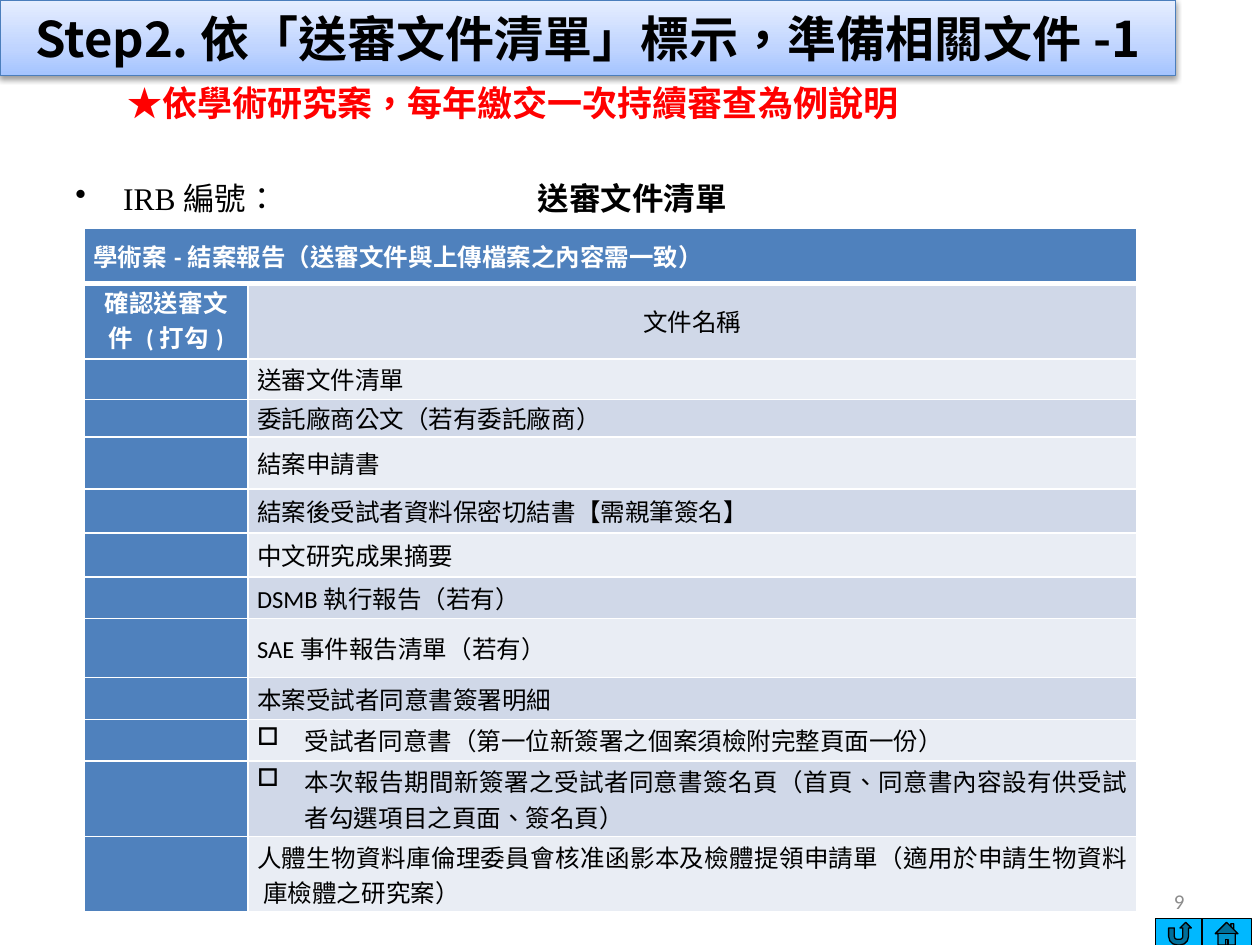
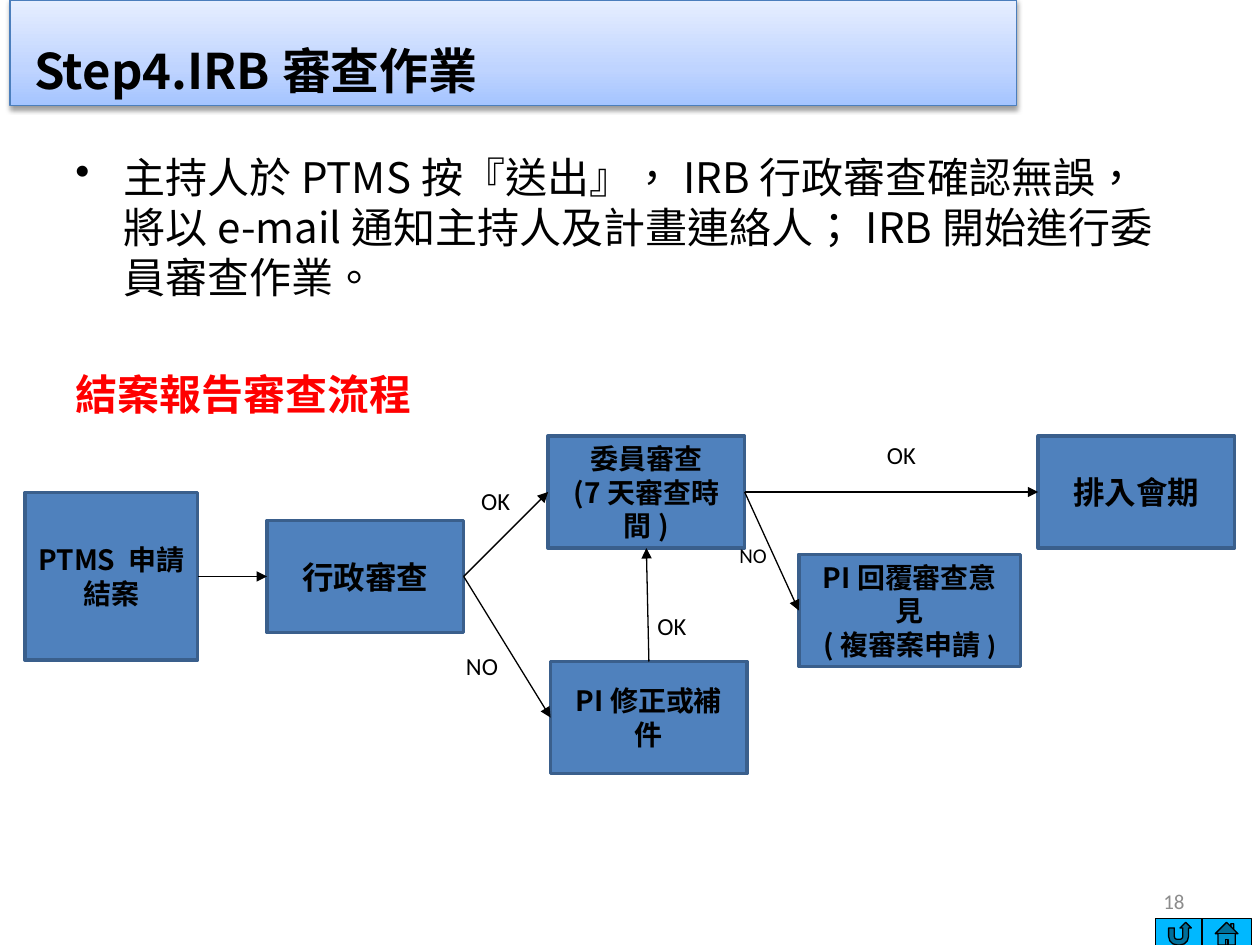
from lxml.etree import SubElement
from pptx import Presentation
from pptx.dml.color import RGBColor
from pptx.enum.shapes import MSO_CONNECTOR, MSO_SHAPE
from pptx.enum.text import MSO_ANCHOR as ANCHOR, PP_ALIGN as ALIGN
from pptx.oxml.ns import qn
from pptx.util import Inches, Pt

NOTO, CALIBRI, TIMES = "Noto Sans CJK SC", "Calibri", "Times New Roman"
BLACK, WHITE, RED, GREY = "000000", "FFFFFF", "FF0000", "8C8C8C"
BLUE, NODE_EDGE, BUTTON = "4F81BD", "3A5F8C", "00B8FF"
BANDS = ["D0D8E8", "E9EDF4"]
TITLE_EDGE = "4B7EBC"
TITLE_STOPS = [(0, "A4C4FF"), (35, "BFD4FF"), (100, "E6EEFF")]
HANG = 0.38

DOCUMENTS = [
    (0.32, "送審文件清單", 0, None),
    (0.3, "委託廠商公文（若有委託廠商）", 0, None),
    (0.41, "結案申請書", 0, None),
    (0.35, "結案後受試者資料保密切結書【需親筆簽名】", 0, None),
    (0.35, "中文研究成果摘要", 0, None),
    (0.33, "DSMB執行報告（若有）", 0, None),
    (0.47, "SAE事件報告清單（若有）", 0, None),
    (0.33, "本案受試者同意書簽署明細", 0, None),
    (0.33, "受試者同意書（第一位新簽署之個案須檢附完整頁面一份）", HANG, "□"),
    (0.6, "本次報告期間新簽署之受試者同意書簽名頁"
          "（首頁、同意書內容設有供受試者勾選項目之頁面、簽名頁）", HANG, "□"),
    (0.6, "人體生物資料庫倫理委員會核准函影本及檢體提領申請單"
          "（適用於申請生物資料庫檢體之研究案）", 0.05, None),
]

STEPS = {
    "apply": (0, 0.45, 1.37, 1.33, 16, [[("PTMS 申請結案", NOTO)]]),
    "admin": (1.92, 0.67, 1.56, 0.89, 18, [[("行政審查", NOTO)]]),
    "member": (4.15, 0, 1.56, 0.89, 16, [[("委員審查", NOTO)], [("(7天審查時間)", NOTO)]]),
    "amend": (4.17, 1.79, 1.56, 0.89, 16, [[("PI修正或補件", NOTO)]]),
    "meeting": (8.04, 0, 1.56, 0.89, 18, [[("排入會期", NOTO)]]),
    "reply": (6.14, 0.94, 1.76, 0.89, 16,
              [[("PI回覆審查意見", NOTO)], [("(複審案申請", NOTO), (")", CALIBRI)]]),
}
TOP, LEFT, BOTTOM, RIGHT = range(4)
ARROWS = [
    ("apply", RIGHT, "admin", LEFT), ("admin", RIGHT, "amend", LEFT),
    ("admin", RIGHT, "member", LEFT), ("amend", TOP, "member", BOTTOM),
    ("member", RIGHT, "reply", LEFT), ("member", RIGHT, "meeting", LEFT),
]
ANSWERS = [
    (3.52, 0.35, "OK", 14), (3.4, 1.66, "NO", 14), (4.92, 1.34, "OK", 14),
    (6.74, -0.02, "OK", 14), (5.57, 0.8, "NO", 12),
]


def colour(value):
    return RGBColor.from_string(value)


def child(parent, tag, **attributes):
    return SubElement(parent, qn(tag), attributes)


def solid(part, fill, edge, width):
    part.shadow.inherit = False
    part.fill.solid()
    part.fill.fore_color.rgb = colour(fill)
    part.line.color.rgb = colour(edge)
    part.line.width = Pt(width)


def write(paragraph, text, size, font=NOTO, ink=BLACK, bold=False):
    run = paragraph.add_run()
    run.text = text
    run.font.size = Pt(size)
    run.font.bold = bold
    run.font.color.rgb = colour(ink)
    run.font.name = font
    properties = run.font._element
    properties.set("lang", "zh-TW")
    child(properties, "a:ea", typeface=NOTO)


def hang(paragraph, indent, bullet=None):
    properties = paragraph._p.get_or_add_pPr()
    properties.set("marL", str(Inches(indent)))
    properties.set("indent", str(-Inches(indent)))
    if bullet:
        child(properties, "a:buChar", char=bullet)


def leading(paragraph, size):
    paragraph.line_spacing = Pt(round(size * 1.2, 1))


def text_box(slide, left, top, width, height):
    frame = slide.shapes.add_textbox(
        Inches(left), Inches(top), Inches(width), Inches(height)).text_frame
    frame.word_wrap = True
    return frame


def title_band(slide, text, left, width, height, align, anchor, inset=0.1):
    band = slide.shapes.title
    band.left, band.top = Inches(left), 0
    band.width, band.height = Inches(width), Inches(height)
    gradient = child(band._element.spPr, "a:gradFill", rotWithShape="1")
    stops = child(gradient, "a:gsLst")
    for position, shade in TITLE_STOPS:
        child(child(stops, "a:gs", pos=str(position * 1000)), "a:srgbClr", val=shade)
    child(gradient, "a:lin", ang="16200000", scaled="0")
    band.line.color.rgb = colour(TITLE_EDGE)
    band.line.width = Pt(0.75)
    effects = child(band._element.spPr, "a:effectLst")
    shadow = child(effects, "a:outerShdw", blurRad=str(Pt(3.1)), dist=str(Pt(1.6)),
                   dir="5400000", rotWithShape="0")
    child(child(shadow, "a:srgbClr", val=BLACK), "a:alpha", val="38000")
    frame = band.text_frame
    frame.vertical_anchor = anchor
    frame.margin_left = Inches(inset)
    heading = frame.paragraphs[0]
    heading.alignment = align
    leading(heading, 28)
    write(heading, text, 28, bold=True)


def footer(slide, number):
    buttons = [MSO_SHAPE.ACTION_BUTTON_RETURN, MSO_SHAPE.ACTION_BUTTON_HOME]
    for index, kind in enumerate(buttons):
        button = slide.shapes.add_shape(
            kind, Inches(9.17 + 0.37 * index), Inches(7.29), Inches(0.39), Inches(0.24))
        solid(button, BUTTON, BLACK, 0.75)
    frame = text_box(slide, 7.17, 6.95, 2.33, 0.4)
    frame.vertical_anchor = ANCHOR.MIDDLE
    page = frame.paragraphs[0]
    page.alignment = ALIGN.RIGHT
    write(page, number, 12, CALIBRI, GREY)


def text_line(slide, box, text, size, font=NOTO, ink=BLACK, bold=False, bullet=None):
    line = text_box(slide, *box).paragraphs[0]
    if bullet:
        hang(line, HANG, bullet)
    leading(line, size)
    write(line, text, size, font, ink, bold)


def table_cell(cell, fill, text="", align=ALIGN.JUSTIFY, ink=BLACK, bold=False,
               anchor=ANCHOR.MIDDLE, indent=0, bullet=None, under=1):
    cell.margin_left = cell.margin_right = Inches(0.07)
    cell.margin_top = cell.margin_bottom = 0
    cell.vertical_anchor = anchor
    properties = cell._tc.get_or_add_tcPr()
    for side, width in zip("LRTB", [1, 1, 1, under]):
        border = child(properties, f"a:ln{side}", w=str(Pt(width)))
        child(child(border, "a:solidFill"), "a:srgbClr", val=WHITE)
    cell.fill.solid()
    cell.fill.fore_color.rgb = colour(fill)
    entry = cell.text_frame.paragraphs[0]
    if not text:
        child(entry._p, "a:endParaRPr", sz="1400")
        return
    entry.alignment = align
    if indent:
        hang(entry, indent, bullet)
    write(entry, text, 14, CALIBRI, ink, bold)


def checklist(slide, left, top):
    heights = [0.44, 0.6] + [height for height, *_ in DOCUMENTS]
    table = slide.shapes.add_table(
        len(heights), 2, Inches(left), Inches(top), Inches(8.35), Inches(sum(heights))).table
    for column, width in zip(table.columns, [1.3, 7.05]):
        column.width = Inches(width)
    for row, height in zip(table.rows, heights):
        row.height = Inches(height)
    table.cell(0, 0).merge(table.cell(0, 1))
    table_cell(table.cell(0, 0), BLUE, "學術案-結案報告（送審文件與上傳檔案之內容需一致）",
               ALIGN.LEFT, WHITE, True, under=3)
    table_cell(table.cell(0, 1), BLUE, under=3)
    table_cell(table.cell(1, 0), BLUE, "確認送審文件 (打勾)", ALIGN.CENTER, WHITE, True, ANCHOR.TOP)
    table_cell(table.cell(1, 1), BANDS[0], "文件名稱", ALIGN.CENTER)
    for row, (_, name, indent, bullet) in enumerate(DOCUMENTS, 2):
        table_cell(table.cell(row, 0), BLUE)
        table_cell(table.cell(row, 1), BANDS[(row - 1) % 2], name, indent=indent, bullet=bullet)


def step_node(slide, box, size, lines):
    node = slide.shapes.add_shape(MSO_SHAPE.RECTANGLE, *map(Inches, box))
    solid(node, BLUE, NODE_EDGE, 2)
    frame = node.text_frame
    frame.word_wrap = True
    frame.vertical_anchor = ANCHOR.MIDDLE
    for index, runs in enumerate(lines):
        line = frame.add_paragraph() if index else frame.paragraphs[0]
        line.alignment = ALIGN.CENTER
        leading(line, size)
        for text, font in runs:
            write(line, text, size, font, bold=True)
    return node


def arrow(slide, source, source_side, target, target_side):
    link = slide.shapes.add_connector(MSO_CONNECTOR.STRAIGHT, 0, 0, 0, 0)
    link.begin_connect(source, source_side)
    link.end_connect(target, target_side)
    link.line.color.rgb = colour(BLACK)
    link.line.width = Pt(0.75)
    properties = link._element.spPr
    child(properties.find(qn("a:ln")), "a:tailEnd", type="triangle")
    child(properties, "a:effectLst")


def review_flow(slide, left, top):
    nodes = {
        key: step_node(slide, (left + x, top + y, width, height), size, lines)
        for key, (x, y, width, height, size, lines) in STEPS.items()
    }
    for source, source_side, target, target_side in ARROWS:
        arrow(slide, nodes[source], source_side, nodes[target], target_side)
    for x, y, answer, size in ANSWERS:
        frame = text_box(slide, left + x, top + y, 0.54, 0.43)
        write(frame.paragraphs[0], answer, size, CALIBRI)


def review_notes(slide, left, top):
    frame = text_box(slide, left, top, 8.95, 2.3)
    notice = frame.paragraphs[0]
    hang(notice, HANG, "•")
    leading(notice, 24)
    write(notice, "主持人於PTMS按『送出』，IRB行政審查確認無誤，"
                  "將以e-mail通知主持人及計畫連絡人；IRB開始進行委員審查作業。", 24)
    flow_heading = frame.add_paragraph()
    flow_heading.space_before = Pt(38)
    leading(flow_heading, 24)
    write(flow_heading, "結案報告審查流程", 24, ink=RED, bold=True)


def documents_slide(slide):
    title_band(slide, "Step2.依「送審文件清單」標示，準備相關文件-1",
               0, 9.33, 0.6, ALIGN.CENTER, ANCHOR.MIDDLE)
    text_line(slide, (0.91, 0.6, 7.72, 0.44),
              "★依學術研究案，每年繳交一次持續審查為例說明", 20, ink=RED, bold=True)
    text_line(slide, (0.5, 1.37, 3.5, 0.4), "IRB編號：", 18, TIMES, bullet="•")
    text_line(slide, (4.17, 1.37, 3, 0.4), "送審文件清單", 18, TIMES, bold=True)
    checklist(slide, 0.67, 1.81)
    footer(slide, "9")


def review_slide(slide):
    title_band(slide, "Step4.IRB審查作業", 0.08, 7.99, 0.84, ALIGN.LEFT, ANCHOR.BOTTOM, 0.19)
    review_notes(slide, 0.5, 1.15)
    review_flow(slide, 0.2, 3.46)
    footer(slide, "18")


def main():
    deck = Presentation()
    deck.slide_width, deck.slide_height = Inches(10), Inches(7.5)
    title_only = deck.slide_layouts[5]
    for build in [documents_slide, review_slide]:
        build(deck.slides.add_slide(title_only))
    deck.save("out.pptx")


if __name__ == "__main__":
    main()
